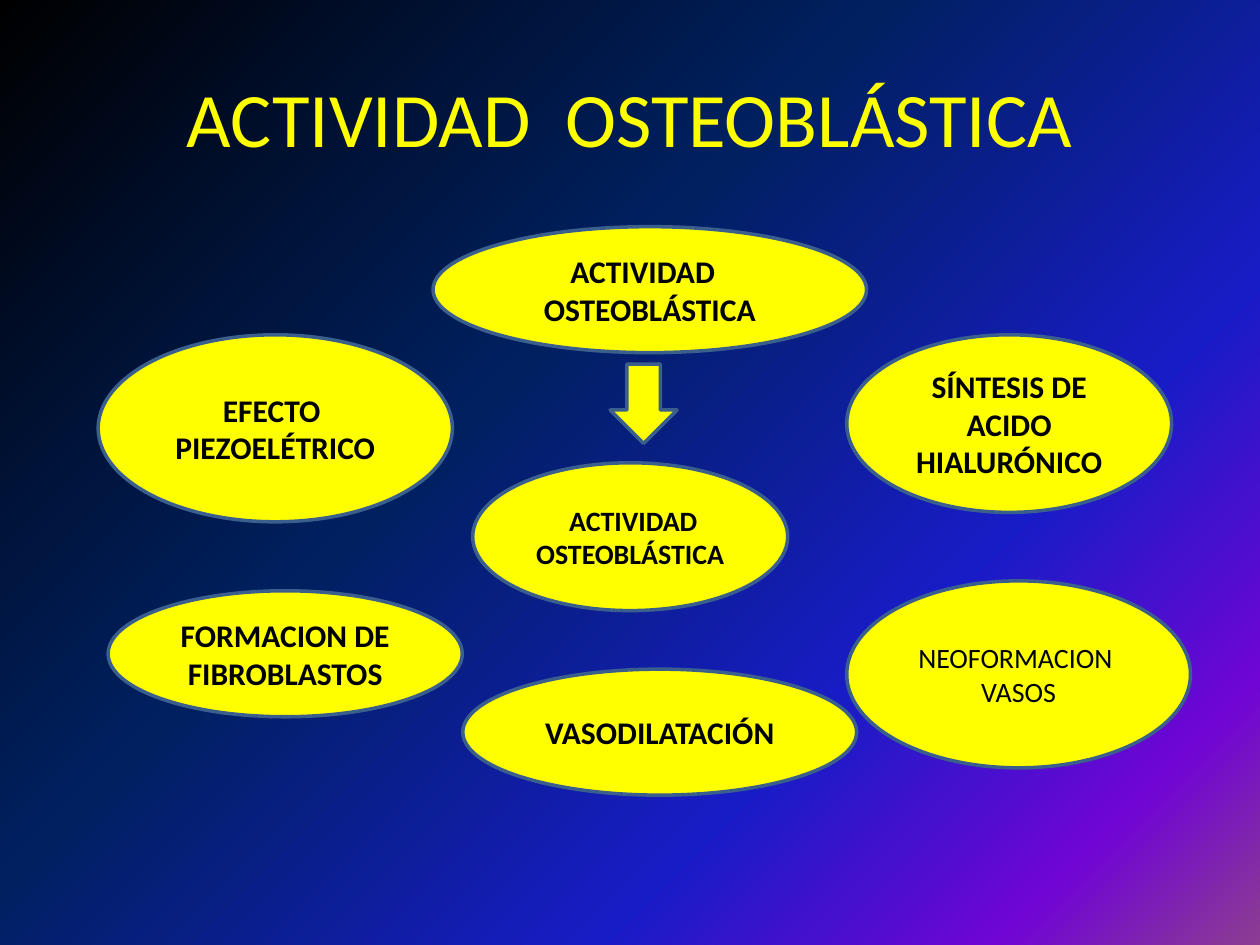
from copy import deepcopy
from dataclasses import dataclass

from pptx import Presentation
from pptx import util as u
from pptx.dml.color import RGBColor
from pptx.enum import shapes, text
from pptx.oxml import ns


@dataclass(frozen=True)
class Theme:
    font: str = "Calibri"
    accent: str = "FFFF00"
    outline: str = "3A5F8C"
    ink: str = "000000"
    title_size: int = 44
    large: int = 18
    small: int = 16
    line_width: int = 2
    backdrop: tuple = ((0, "000000"), (40, "002060"), (70, "181CC7"),
                       (88, "7005D4"), (100, "8C3D91"))


THEME = Theme()

TITLE_BOX = (1.27, 0.76, 22.86, 3.18)
ARROW_BOX = (12.3, 7.34, 1.35, 1.6)
BUBBLES = (
    ((8.73, 4.57, 8.74, 2.54), ["ACTIVIDAD   OSTEOBLÁSTICA"], THEME.large, True),
    ((1.98, 6.75, 7.14, 3.77), ["EFECTO ", "PIEZOELÉTRICO"], THEME.large, True),
    ((9.53, 9.33, 6.35, 2.98), [" ACTIVIDAD OSTEOBLÁSTICA"], THEME.small, True),
    ((17.07, 6.75, 6.55, 3.58), ["SÍNTESIS DE ACIDO", "HIALURÓNICO"], THEME.large, True),
    ((17.07, 11.71, 6.93, 3.77), ["NEOFORMACION ", "VASOS"], THEME.small, False),
    ((2.18, 11.91, 7.14, 2.54), ["FORMACION DE FIBROBLASTOS"], THEME.large, True),
    ((9.33, 13.49, 7.94, 2.54), ["VASODILATACIÓN"], THEME.large, True),
)


def paint_backdrop(page):
    fill = page.background.fill
    fill.gradient()
    fill.gradient_angle = 315
    stop_list = next(page.element.iter(ns.qn("a:gsLst")))
    while len(stop_list) < len(THEME.backdrop):
        stop_list.append(deepcopy(stop_list[0]))
    for stop, (position, color) in zip(fill.gradient_stops, THEME.backdrop):
        stop.position = position / 100
        stop.color.rgb = RGBColor.from_string(color)


def write_lines(frame, lines, size, color, bold=False):
    frame.word_wrap = True
    frame.vertical_anchor = text.MSO_ANCHOR.MIDDLE
    for index, line in enumerate(lines):
        para = frame.add_paragraph() if index else frame.paragraphs[0]
        para.alignment = text.PP_ALIGN.CENTER
        span = para.add_run()
        span.text = line
        span.font.name = THEME.font
        span.font.size = u.Pt(size)
        span.font.bold = bold
        span.font.color.rgb = RGBColor.from_string(color)


def place_title(page, box):
    title = page.shapes.title
    title.left, title.top, title.width, title.height = map(u.Cm, box)
    write_lines(title.text_frame, ["ACTIVIDAD  OSTEOBLÁSTICA"],
                THEME.title_size, THEME.accent)


def place_shape(page, kind, box):
    shape = page.shapes.add_shape(kind, *map(u.Cm, box))
    shape.shadow.inherit = False
    shape.fill.solid()
    shape.fill.fore_color.rgb = RGBColor.from_string(THEME.accent)
    shape.line.color.rgb = RGBColor.from_string(THEME.outline)
    shape.line.width = u.Pt(THEME.line_width)
    return shape


def place_bubble(page, box, lines, size, bold):
    bubble = place_shape(page, shapes.MSO_SHAPE.OVAL, box)
    write_lines(bubble.text_frame, lines, size, THEME.ink, bold)


def main():
    deck = Presentation()
    deck.slide_width, deck.slide_height = u.Cm(25.4), u.Cm(19.05)
    page = deck.slides.add_slide(deck.slide_layouts.get_by_name("Title Only"))
    paint_backdrop(page)
    place_title(page, TITLE_BOX)
    for bubble in BUBBLES:
        place_bubble(page, *bubble)
    place_shape(page, shapes.MSO_SHAPE.DOWN_ARROW, ARROW_BOX)
    deck.save("out.pptx")


if __name__ == "__main__":
    main()
